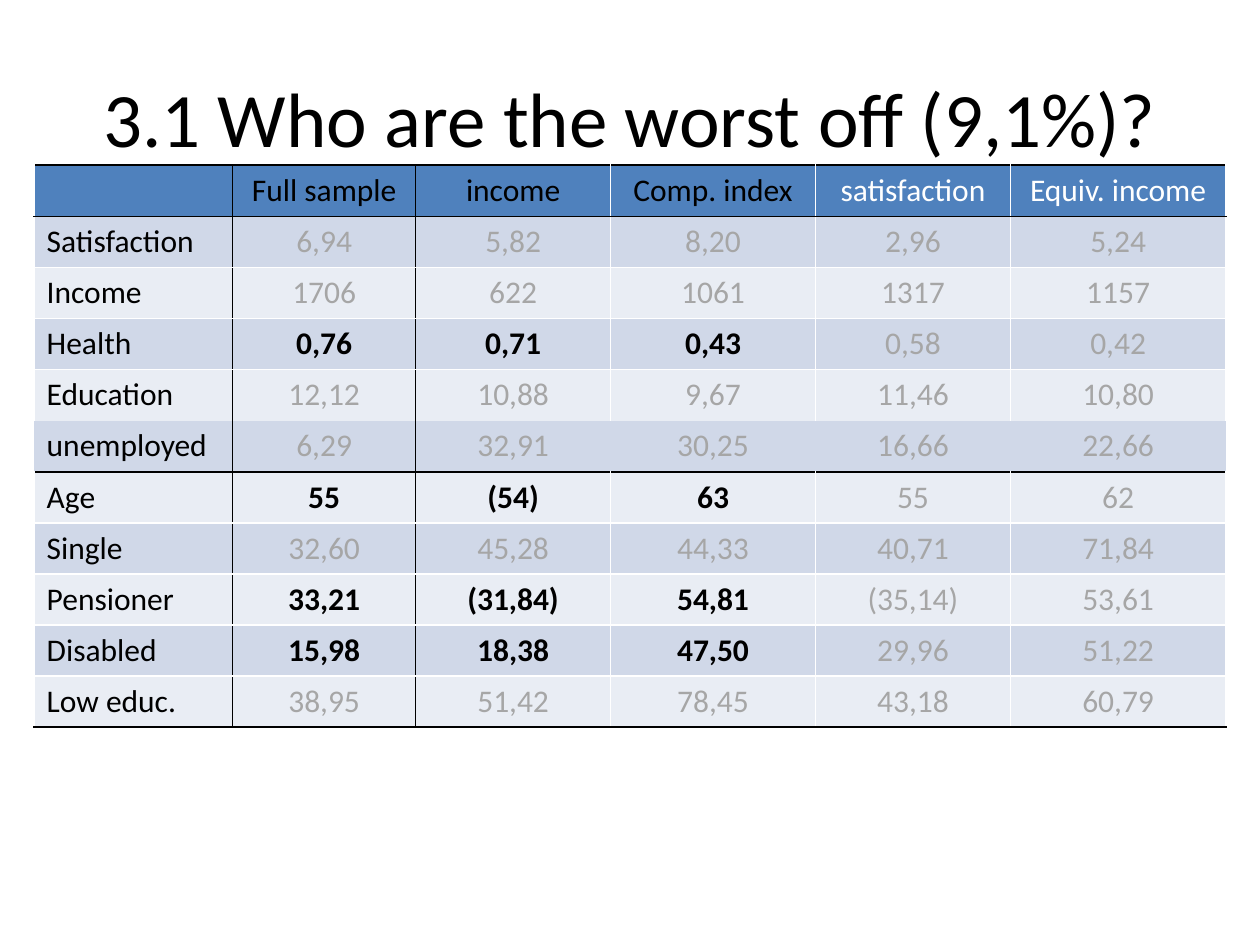
from lxml.etree import SubElement
from pptx import Presentation
from pptx.dml.color import RGBColor
from pptx.enum.text import MSO_ANCHOR, PP_ALIGN
from pptx.oxml.ns import qn
from pptx.util import Pt

BLACK = RGBColor(0x00, 0x00, 0x00)
WHITE = RGBColor(0xFF, 0xFF, 0xFF)
GREY = RGBColor(0xA6, 0xA6, 0xA6)
HEADER_BLUE = RGBColor(0x4F, 0x81, 0xBD)
BAND_DARK = RGBColor(0xD0, 0xD8, 0xE8)
BAND_LIGHT = RGBColor(0xE9, 0xED, 0xF4)

ROWS = [
    ["", "Full sample", "income", "Comp. index", "satisfaction", "Equiv. income"],
    ["Satisfaction", "6,94", "5,82", "8,20", "2,96", "5,24"],
    ["Income", "1706", "622", "1061", "1317", "1157"],
    ["Health", "0,76", "0,71", "0,43", "0,58", "0,42"],
    ["Education", "12,12", "10,88", "9,67", "11,46", "10,80"],
    ["unemployed", "6,29", "32,91", "30,25", "16,66", "22,66"],
    ["Age", "55", "(54)", "63", "55", "62"],
    ["Single", "32,60", "45,28", "44,33", "40,71", "71,84"],
    ["Pensioner", "33,21", "(31,84)", "54,81", "(35,14)", "53,61"],
    ["Disabled", "15,98", "18,38", "47,50", "29,96", "51,22"],
    ["Low educ.", "38,95", "51,42", "78,45", "43,18", "60,79"],
]
COLUMN_WIDTHS = [113.5, 104.5, 111.5, 117, 111.5, 123]
ROW_HEIGHT = 29.2
HIGHLIGHTED_ROWS = {"Health", "Age", "Pensioner", "Disabled"}
UNRULED_ROW = 5
BLACK_ROW_LINES = {0, 1, 6, len(ROWS)}
BLACK_COLUMN_LINES = {1, 2}


def row_line_color(line):
    if line == UNRULED_ROW:
        return None
    return BLACK if line in BLACK_ROW_LINES else WHITE


def column_line_color(line, row):
    if line in BLACK_COLUMN_LINES:
        return BLACK
    return None if row == UNRULED_ROW else WHITE


def cell_fill(row):
    if row == 0:
        return HEADER_BLUE
    return BAND_DARK if row % 2 else BAND_LIGHT


def cell_font(row, column):
    if row == 0:
        return (BLACK if column <= 3 else WHITE), False
    if column == 0:
        return BLACK, False
    highlighted = ROWS[row][0] in HIGHLIGHTED_ROWS and column <= 3
    return (BLACK if highlighted else GREY), highlighted


class SlideBuilder:
    font_name = "Calibri"
    title_size = Pt(44)
    table_size = Pt(18)
    border_width = Pt(1)

    def __init__(self, slide):
        self.slide = slide

    def format_paragraph(self, paragraph, size, color, alignment, bold=False):
        paragraph.alignment = alignment
        for run in paragraph.runs:
            run.font.name = self.font_name
            run.font.size = size
            run.font.bold = bold
            run.font.color.rgb = color

    def title(self, text, left, top, width, height):
        shape = self.slide.shapes.title
        shape.left, shape.top = Pt(left), Pt(top)
        shape.width, shape.height = Pt(width), Pt(height)
        shape.text_frame.text = text
        shape.text_frame.vertical_anchor = MSO_ANCHOR.MIDDLE
        self.format_paragraph(shape.text_frame.paragraphs[0], self.title_size, BLACK, PP_ALIGN.CENTER)

    def border(self, cell, side, color):
        properties = cell._tc.get_or_add_tcPr()
        line = SubElement(properties, qn(f"a:ln{side}"), w=str(self.border_width))
        if color is None:
            SubElement(line, qn("a:noFill"))
        else:
            fill = SubElement(line, qn("a:solidFill"))
            SubElement(fill, qn("a:srgbClr"), val=str(color))

    def cell(self, cell, row, column):
        self.border(cell, "L", column_line_color(column, row))
        self.border(cell, "R", column_line_color(column + 1, row))
        self.border(cell, "T", row_line_color(row))
        self.border(cell, "B", row_line_color(row + 1))
        cell.fill.solid()
        cell.fill.fore_color.rgb = cell_fill(row)
        cell.text_frame.text = ROWS[row][column]
        color, bold = cell_font(row, column)
        alignment = PP_ALIGN.CENTER if column else PP_ALIGN.LEFT
        self.format_paragraph(cell.text_frame.paragraphs[0], self.table_size, color, alignment, bold)

    def table(self, left, top):
        frame = self.slide.shapes.add_table(
            len(ROWS), len(COLUMN_WIDTHS), Pt(left), Pt(top),
            Pt(sum(COLUMN_WIDTHS)), Pt(ROW_HEIGHT * len(ROWS)),
        )
        table = frame.table
        for column, width in zip(table.columns, COLUMN_WIDTHS):
            column.width = Pt(width)
        for row_index, row in enumerate(table.rows):
            row.height = Pt(ROW_HEIGHT)
            for column_index, cell in enumerate(row.cells):
                self.cell(cell, row_index, column_index)


def main():
    presentation = Presentation()
    presentation.slide_width = Pt(720)
    presentation.slide_height = Pt(540)
    title_only = presentation.slide_layouts[5]
    builder = SlideBuilder(presentation.slides.add_slide(title_only))
    builder.title("3.1 Who are the worst off (9,1%)?", 36, 21.6, 648, 90)
    builder.table(19.5, 94.4)
    presentation.save("out.pptx")


if __name__ == "__main__":
    main()
